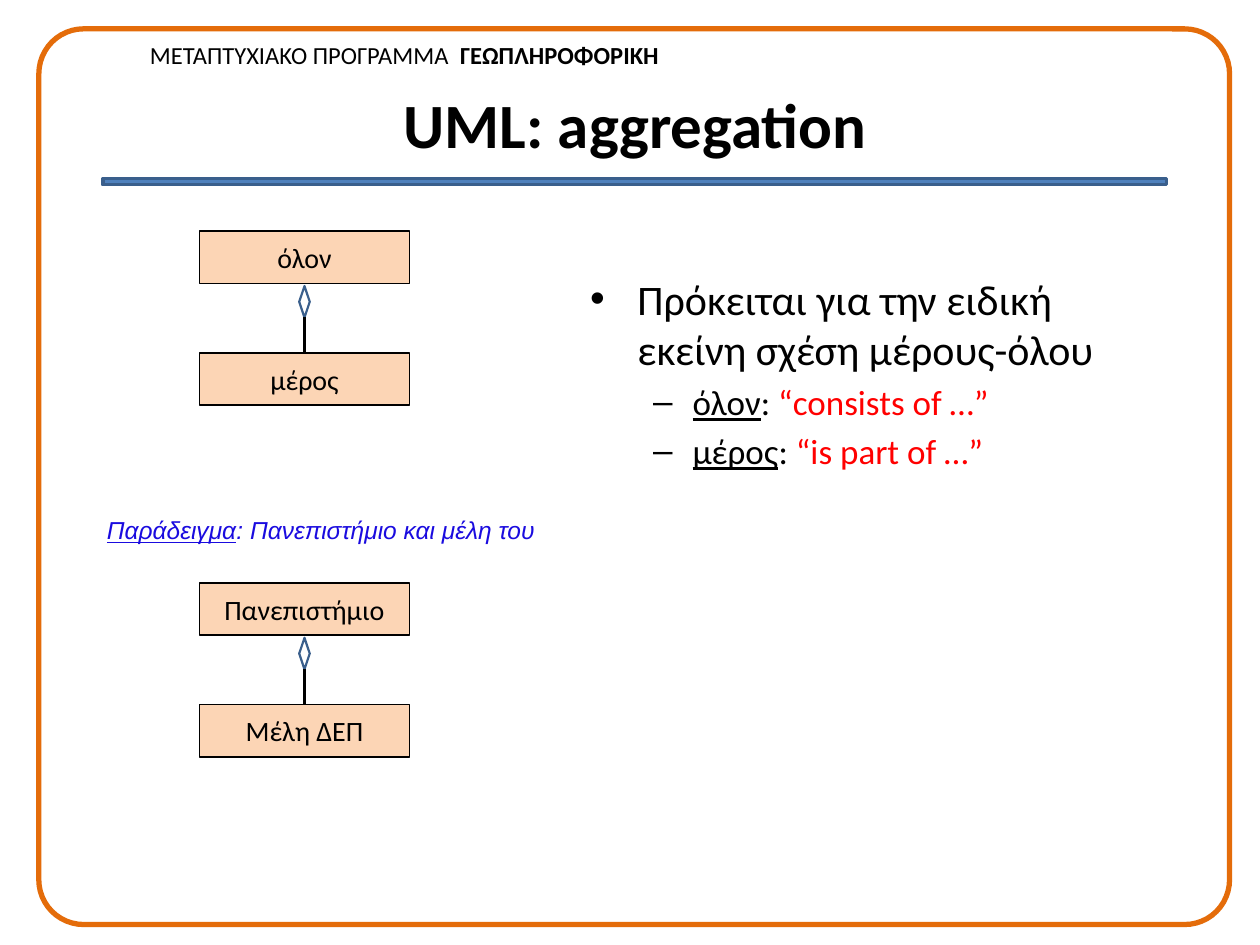
from lxml import etree
from pptx import Presentation
from pptx import util as u
from pptx.dml.color import RGBColor
from pptx.enum import shapes as sh, text as tx
from pptx.oxml.ns import qn

COLS, ROWS = 120, 90
WIDE, HIGH = u.Inches(10), u.Inches(7.5)
HUES = {
    "ink": "000000", "frame": "E46C0A", "bar": "4F81BD", "edge": "3A5F8C",
    "box": "FCD5B5", "quote": "FF0000", "note": "1A0BDF",
}
BOX_W, BOX_H, STEP = 20, 5, 11.6
TIP_W, TIP_H, GAP = 1, 3, 0.24


def hue(name):
    return RGBColor.from_string(HUES[name])


def col(n):
    return int(WIDE * n / COLS)


def row(n):
    return int(HIGH * n / ROWS)


def area(x, y, w, h):
    return col(x), row(y), col(w), row(h)


def place(item, *cells):
    item.left, item.top, item.width, item.height = area(*cells)


def style(para, size, tone="ink", face="Calibri", **flags):
    font = para.font
    font.name, font.size = face, u.Pt(size)
    font.color.rgb = hue(tone)
    for key, value in flags.items():
        setattr(font, key, value)


def add_run(para, words, tone=None, **flags):
    run = para.add_run()
    run.text = words
    if tone:
        run.font.color.rgb = hue(tone)
    for key, value in flags.items():
        setattr(run.font, key, value)


def add_shape(slide, kind, cells, line, width, fill=None):
    item = slide.shapes.add_shape(kind, *area(*cells))
    item.shadow.inherit = False
    if fill:
        item.fill.solid()
        item.fill.fore_color.rgb = hue(fill)
    else:
        item.fill.background()
    item.line.color.rgb = hue(line)
    item.line.width = u.Pt(width)
    return item


def add_label(slide, cells):
    frame = slide.shapes.add_textbox(*area(*cells)).text_frame
    frame.word_wrap = False
    frame.auto_size = tx.MSO_AUTO_SIZE.SHAPE_TO_FIT_TEXT
    return frame.paragraphs[0]


def add_box(slide, x, y, words):
    item = add_shape(slide, sh.MSO_SHAPE.RECTANGLE, (x, y, BOX_W, BOX_H), "ink", 1, "box")
    frame = item.text_frame
    frame.vertical_anchor = tx.MSO_ANCHOR.MIDDLE
    para = frame.paragraphs[0]
    para.text = words
    para.alignment = tx.PP_ALIGN.CENTER
    style(para, 16)


def add_link(slide, x, top, end):
    link = slide.shapes.add_connector(
        sh.MSO_CONNECTOR.STRAIGHT, col(x), row(top), col(x), row(end))
    link.line.color.rgb = hue("ink")
    link.line.width = u.Pt(1.25)
    etree.SubElement(link._element.spPr, qn("a:effectLst"))


def add_pair(slide, x, y, whole, part):
    mid, tip = x + BOX_W / 2, y + BOX_H + GAP
    add_box(slide, x, y, whole)
    add_box(slide, x, y + STEP, part)
    add_shape(slide, sh.MSO_SHAPE.FLOWCHART_DECISION,
              (mid - TIP_W / 2, tip, TIP_W, TIP_H), "edge", 1.25)
    add_link(slide, mid, tip + TIP_H, y + STEP)


def add_frame(slide):
    para = add_label(slide, (13.1, 3.25, 51.4, 4.1))
    add_run(para, "ΜΕΤΑΠΤΥΧΙΑΚΟ ΠΡΟΓΡΑΜΜΑ  ")
    add_run(para, "ΓΕΩΠΛΗΡΟΦΟΡΙΚΗ", bold=True)
    style(para, 14)
    add_shape(slide, sh.MSO_SHAPE.RECTANGLE, (9.8, 17, 101.3, 0.6), "edge", 2, "bar")
    edge = add_shape(slide, sh.MSO_SHAPE.ROUNDED_RECTANGLE,
                     (3.7, 2.75, 113.4, 85.3), "frame", 3)
    edge.adjustments[0] = 0.05


def set_title(slide):
    title = slide.shapes.title
    place(title, 6.5, 6, 108, 11.4)
    title.text_frame.vertical_anchor = tx.MSO_ANCHOR.MIDDLE
    para = title.text_frame.paragraphs[0]
    para.text = "UML: aggregation"
    para.alignment = tx.PP_ALIGN.CENTER
    style(para, 36, bold=True)


def set_body(slide):
    body = slide.placeholders[1]
    place(body, 55, 24.6, 56, 27.4)
    frame = body.text_frame
    frame.auto_size = tx.MSO_AUTO_SIZE.NONE
    frame.margin_top = row(1.4)
    para = frame.paragraphs[0]
    para.text = "Πρόκειται για την ειδική εκείνη σχέση μέρους-όλου"
    para.space_before = u.Pt(0)
    style(para, 24)
    for term, quote in (("όλον", "“consists of …”"), ("μέρος", "“is part of …”")):
        para = frame.add_paragraph()
        para.level = 1
        add_run(para, term, underline=True)
        add_run(para, ": ")
        add_run(para, quote, "quote")
        style(para, 20)


def add_note(slide):
    para = add_label(slide, (9, 48.5, 43.4, 4.1))
    add_run(para, "Παράδειγμα", underline=True)
    add_run(para, ": Πανεπιστήμιο και μέλη του")
    style(para, 14, "note", "Arial", italic=True)


def main():
    deck = Presentation()
    deck.slide_width, deck.slide_height = WIDE, HIGH
    slide = deck.slides.add_slide(deck.slide_layouts[1])
    add_frame(slide)
    set_title(slide)
    set_body(slide)
    add_pair(slide, 19, 22, "όλον", "μέρος")
    add_pair(slide, 19, 55.5, "Πανεπιστήμιο", "Μέλη ΔΕΠ")
    add_note(slide)
    deck.save("out.pptx")


if __name__ == "__main__":
    main()
